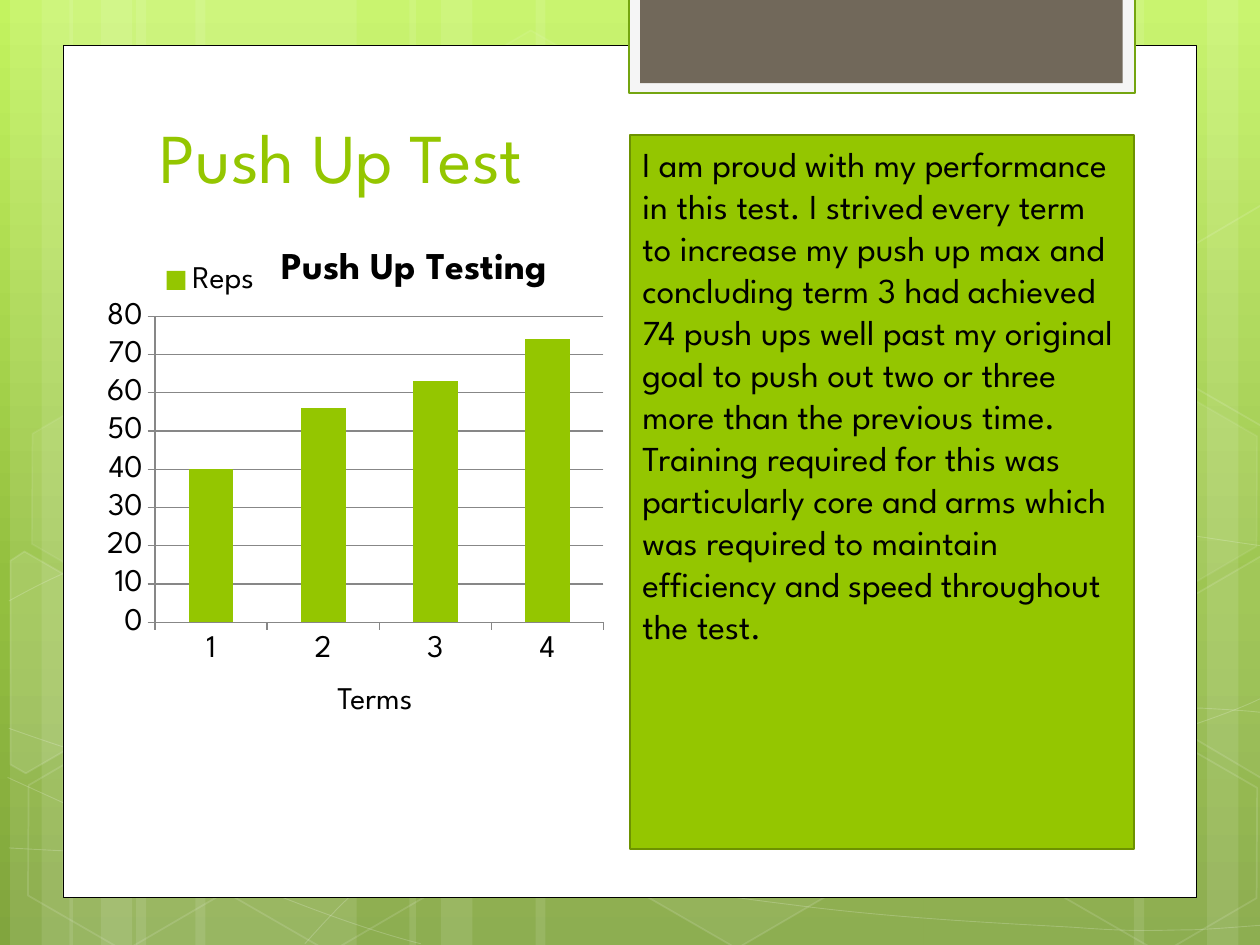
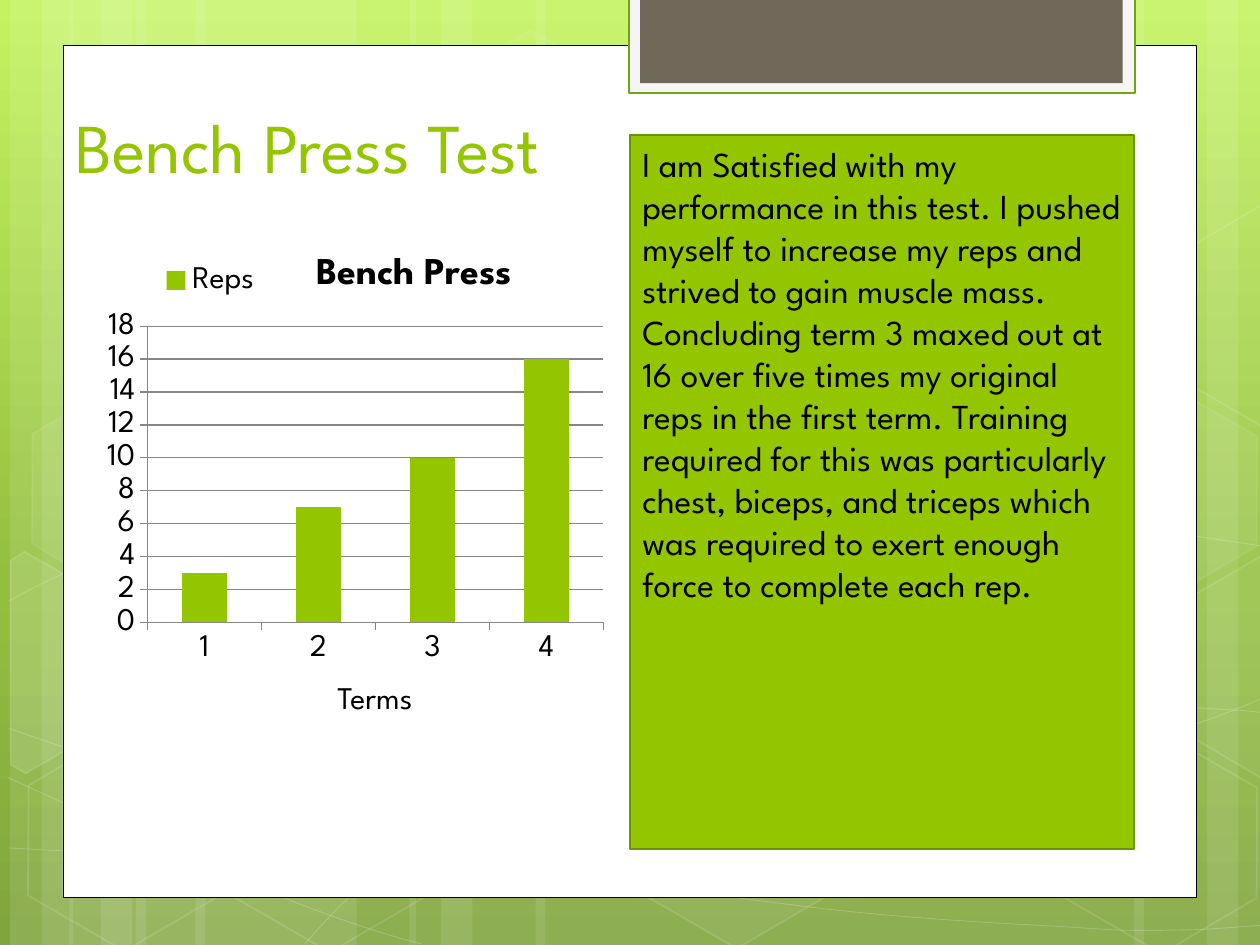
from math import cos, radians, sin
from typing import NamedTuple, Optional

from lxml.etree import SubElement
from pptx import Presentation
from pptx.chart.chart import Chart
from pptx.chart.data import CategoryChartData
from pptx.dml.color import RGBColor
from pptx.dml.fill import FillFormat
from pptx.enum.chart import XL_CHART_TYPE, XL_LEGEND_POSITION, XL_TICK_MARK
from pptx.enum.shapes import MSO_SHAPE
from pptx.enum.text import MSO_ANCHOR
from pptx.oxml.ns import qn
from pptx.shapes.autoshape import Shape
from pptx.slide import Slide
from pptx.text.text import Font
from pptx.util import Pt

PX = 9144  # 100 px to the inch
FONT = "League Spartan"
GREEN, DARK_GREEN, FRAME_GREEN = "94C600", "6D9200", "74A510"
WHITE, BLACK, OFF_WHITE, TAUPE, GRID_GREY = "FFFFFF", "000000", "F5F5F5", "71685A", "878787"
BACKDROP = ((0, "C3F35F"), (62, "93BF3F"), (100, "81A53E"))
HEXAGON_TILT = 30
HEXAGON_SLANT = 28.5 / 100

Point = tuple[int, int]


class Box(NamedTuple):
    left: int
    top: int
    width: int
    height: int

    def emu(self) -> list[int]:
        return [side * PX for side in self]


class Paint(NamedTuple):
    color: str
    opacity: int = 100


class Stroke(NamedTuple):
    paint: Paint
    points: float


class Hexagon(NamedTuple):
    left: int
    top: int
    fill_opacity: int
    line_opacity: int


class CutHexagon(NamedTuple):
    center: Point
    corners: list[Point]
    fill_opacity: int


class Spot(NamedTuple):
    """Place inside the chart, in px from its corner."""
    x: int
    y: int
    w: Optional[int] = None
    h: Optional[int] = None


class FitnessTest(NamedTuple):
    heading: str
    heading_at: Box
    chart_title: str
    chart_title_spot: Spot
    plot_spot: Spot
    reps: tuple[int, ...]
    axis_max: int
    axis_step: int
    reflection: str


# Backdrop: (left, width) of the vertical stripes
STRIPES = [(108, 175), (8, 50), (33, 83), (155, 175), (55, 50), (80, 83),
           (733, 175), (958, 50), (900, 83), (425, 308), (325, 50), (350, 83)]

# Backdrop: a start point, then cubic triples; a triple of one point is a straight line
CURVES: list[list[Point]] = [
    [(7, 673), (61, 676), (115, 679), (190, 678), (265, 677), (358, 675), (458, 665),
     (558, 655), (700, 636), (792, 617), (883, 598), (977, 568), (1007, 551)],
    [(7, 477), (36, 461), (65, 446), (121, 431), (178, 416), (259, 394), (347, 387),
     (436, 380), (544, 379), (654, 387), (764, 395), (947, 426), (1007, 434)],
    [(6, 617), (127, 672), (247, 727), (334, 749)],
    [(7, 578), (38, 589), (70, 600), (128, 616), (186, 631), (273, 656), (357, 673),
     (440, 690), (545, 708), (628, 718), (711, 729), (800, 733), (853, 736),
     (905, 740), (919, 738), (945, 738), (971, 737), (989, 735), (1007, 734)],
    [(242, 749), (260, 729), (278, 709), (302, 691), (326, 673), (360, 653), (388, 639),
     (416, 625), (433, 619), (470, 609), (506, 599), (573, 585), (608, 578),
     (644, 571), (649, 571), (680, 569), (711, 566), (760, 563), (794, 562),
     (829, 561), (886, 562), (886, 562), (953, 562), (953, 562), (953, 562),
     (971, 563), (988, 564), (997, 565), (1006, 566), (1003, 565), (1006, 566)],
]

HEXAGONS = [
    Hexagon(334, 36, 4, 8), Hexagon(497, 589, 6, 12), Hexagon(11, 591, 0, 12),
    Hexagon(14, 312, 7, 8), Hexagon(174, 592, 0, 12), Hexagon(753, 453, 10, 12),
    Hexagon(834, 593, 0, 12), Hexagon(834, 314, 7, 8),
]
CUT_HEXAGONS = [
    CutHexagon((36, 535), [(8, 445), (19, 438), (96, 482), (95, 570), (20, 614), (8, 607)], 10),
    CutHexagon((985, 520), [(926, 485), (1001, 441), (1009, 446), (1009, 613), (1002, 617),
                            (926, 573)], 4),
    CutHexagon((985, 241), [(926, 207), (1001, 163), (1010, 168), (1009, 335), (1002, 339),
                            (926, 295)], 0),
]

# Page
PAGE = Box(50, 36, 900, 676)
TAB_FRAME = Box(499, -2, 402, 76)
TAB = Box(508, -2, 383, 68)
CHART = Box(75, 183, 508, 350)
REFLECTION_PANEL = Box(500, 107, 400, 567)
REFLECTION_TEXT = Box(500, 108, 400, 481)
TERMS = Box(258, 533, 92, 40)
LEGEND_SPOT = Spot(49, 23)

TESTS = [
    FitnessTest(
        "Push Up Test", Box(117, 66, 768, 96),
        "Push Up Testing", Spot(143, 9), Spot(48, 68, 356, 243),
        (40, 56, 63, 74), 80, 10,
        "I am proud with my performance in this test. I strived every term to increase "
        "my push up max and concluding term 3 had achieved 74 push ups well past my "
        "original goal to push out two or three more than the previous time. Training "
        "required for this was particularly core and arms which was required to maintain "
        "efficiency and speed throughout the test."),
    FitnessTest(
        "Bench Press Test", Box(50, 58, 768, 96),
        "Bench Press", Spot(171, 13), Spot(42, 76, 362, 235),
        (3, 7, 10, 16), 18, 2,
        "I am Satisfied with my performance in this test. I pushed myself to increase my "
        "reps and strived to gain muscle mass. Concluding term 3 maxed out at 16 over five "
        "times my original reps in the first term. Training required for this was "
        "particularly chest, biceps, and triceps which was required to exert enough force "
        "to complete each rep."),
]


# Styling
def rgb(color: str) -> RGBColor:
    return RGBColor.from_string(color)


def apply_paint(fill: FillFormat, paint: Optional[Paint]) -> None:
    if paint is None or paint.opacity == 0:
        fill.background()
        return
    fill.solid()
    fill.fore_color.rgb = rgb(paint.color)
    if paint.opacity < 100:
        color = fill._xPr.find(qn("a:solidFill"))[0]
        SubElement(color, qn("a:alpha"), val=str(paint.opacity * 1000))


def style_shape(shape: Shape, fill: Optional[Paint], stroke: Optional[Stroke] = None) -> None:
    shape.shadow.inherit = False
    apply_paint(shape.fill, fill)
    apply_paint(shape.line.fill, stroke.paint if stroke else None)
    if stroke:
        shape.line.width = Pt(stroke.points)


def style_font(font: Font, size: float, color: str = BLACK, bold: bool = False) -> None:
    font.name, font.size, font.bold = FONT, Pt(size), bold
    font.color.rgb = rgb(color)


# Drawing
def add_block(slide: Slide, box: Box, fill: Paint, stroke: Optional[Stroke] = None) -> None:
    style_shape(slide.shapes.add_shape(MSO_SHAPE.RECTANGLE, *box.emu()), fill, stroke)


def add_outline(slide: Slide, points: list[Point], close: bool) -> Shape:
    builder = slide.shapes.build_freeform(*points[0], scale=PX)
    builder.add_line_segments(points[1:], close=close)
    return builder.convert_to_shape()


def add_text(slide: Slide, box: Box, text: str, size: int, color: str = BLACK,
             anchor: MSO_ANCHOR = MSO_ANCHOR.TOP) -> None:
    frame = slide.shapes.add_textbox(*box.emu()).text_frame
    frame.word_wrap = True
    frame.vertical_anchor = anchor
    frame.text = text
    style_font(frame.paragraphs[0].runs[0].font, size, color)


def add_curve(slide: Slide, nodes: list[Point]) -> None:
    """Draw the nodes as an outline and join each three lines into one curve."""
    shape = add_outline(slide, nodes, close=False)
    outline = next(shape._element.iter(qn("a:moveTo"))).getparent()
    lines = outline.findall(qn("a:lnTo"))
    for first in range(0, len(lines), 3):
        triple = lines[first:first + 3]
        if len(set(nodes[first + 1:first + 4])) > 1:
            curve = SubElement(outline, qn("a:cubicBezTo"))
            triple[0].addprevious(curve)
            curve.extend([line[0] for line in triple])
            removed = triple
        else:
            removed = triple[1:]
        for line in removed:
            outline.remove(line)
    style_shape(shape, None, Stroke(Paint(WHITE, 20), 0.5))


def turn_back(point: Point, center: Point) -> Point:
    """Undo the hexagon tilt of a point around a center."""
    tilt = radians(HEXAGON_TILT)
    dx, dy = point[0] - center[0], point[1] - center[1]
    return (round(center[0] + dx * cos(tilt) + dy * sin(tilt)),
            round(center[1] - dx * sin(tilt) + dy * cos(tilt)))


def add_backdrop(slide: Slide) -> None:
    # Gradient
    fill = slide.background.fill
    fill.gradient()
    fill.gradient_angle = 270
    stops = fill._fill._gradFill.find(qn("a:gsLst"))
    for stop in list(stops):
        stops.remove(stop)
    for position, color in BACKDROP:
        stop = SubElement(stops, qn("a:gs"), pos=str(position * 1000))
        SubElement(stop, qn("a:srgbClr"), val=color)

    # Stripes, curves and hexagons
    for left, width in STRIPES:
        add_block(slide, Box(left, 0, width, 750), Paint(WHITE, 10))
    for nodes in CURVES:
        add_curve(slide, nodes)
    for hexagon in HEXAGONS:
        box = Box(hexagon.left, hexagon.top, 175, 152)
        shape = slide.shapes.add_shape(MSO_SHAPE.HEXAGON, *box.emu())
        shape.adjustments[0] = HEXAGON_SLANT
        shape.rotation = HEXAGON_TILT
        style_shape(shape, Paint(WHITE, hexagon.fill_opacity),
                    Stroke(Paint(WHITE, hexagon.line_opacity), 1))
    for cut in CUT_HEXAGONS:
        corners = [turn_back(corner, cut.center) for corner in cut.corners]
        shape = add_outline(slide, corners, close=True)
        shape.rotation = HEXAGON_TILT
        style_shape(shape, Paint(WHITE, cut.fill_opacity), Stroke(Paint(WHITE, 12), 1))

    # White page with the tab at its top
    add_block(slide, PAGE, Paint(WHITE), Stroke(Paint(BLACK), 0.5))
    add_block(slide, TAB_FRAME, Paint(OFF_WHITE), Stroke(Paint(FRAME_GREEN), 1.25))
    add_block(slide, TAB, Paint(TAUPE))


def place_in_chart(element, spot: Spot, index: int) -> None:
    """Give a chart part a manual layout as its child number index."""
    for layout in element.findall(qn("c:layout")):
        element.remove(layout)
    layout = SubElement(element, qn("c:layout"))
    element.insert(index, layout)
    manual = SubElement(layout, qn("c:manualLayout"))
    if spot.w is not None:
        SubElement(manual, qn("c:layoutTarget"), val="inner")
    for mode in ("xMode", "yMode"):
        SubElement(manual, qn(f"c:{mode}"), val="edge")
    for side, length in spot._asdict().items():
        if length is not None:
            whole = CHART.width if side in "xw" else CHART.height
            SubElement(manual, qn(f"c:{side}"), val=str(length / whole))


def add_reps_chart(slide: Slide, test: FitnessTest) -> None:
    data = CategoryChartData()
    data.categories = [str(term) for term in range(1, len(test.reps) + 1)]
    data.add_series("Reps", test.reps)
    chart: Chart = slide.shapes.add_chart(
        XL_CHART_TYPE.COLUMN_CLUSTERED, *CHART.emu(), data).chart
    style_font(chart.font, 18)

    # Title and legend
    title = chart.chart_title
    title.text_frame.text = test.chart_title
    style_font(title.text_frame.paragraphs[0].runs[0].font, 21.6, bold=True)
    place_in_chart(title._element, test.chart_title_spot, 1)
    chart.has_legend = True
    chart.legend.position = XL_LEGEND_POSITION.RIGHT
    chart.legend.include_in_layout = False
    place_in_chart(chart.legend._element, LEGEND_SPOT, 1)

    # Columns
    plot = chart.plots[0]
    plot.gap_width = 150
    plot.vary_by_categories = False
    apply_paint(plot.series[0].format.fill, Paint(GREEN))
    place_in_chart(chart._chartSpace.chart.plotArea, test.plot_spot, 0)

    # Axes
    reps_axis = chart.value_axis
    reps_axis.minimum_scale, reps_axis.maximum_scale = 0, test.axis_max
    reps_axis.major_unit = test.axis_step
    reps_axis.has_major_gridlines = True
    for axis in (reps_axis, chart.category_axis):
        axis.major_tick_mark = XL_TICK_MARK.OUTSIDE
    for lined in (reps_axis, chart.category_axis, reps_axis.major_gridlines):
        lined.format.line.color.rgb = rgb(GRID_GREY)
        lined.format.line.width = Pt(0.75)


def add_test_slide(deck, test: FitnessTest) -> None:
    slide = deck.slides.add_slide(deck.slide_layouts[6])
    add_backdrop(slide)
    add_text(slide, test.heading_at, test.heading, 40, GREEN, MSO_ANCHOR.BOTTOM)
    add_reps_chart(slide, test)
    add_block(slide, REFLECTION_PANEL, Paint(GREEN), Stroke(Paint(DARK_GREEN), 1.25))
    add_text(slide, REFLECTION_TEXT, test.reflection, 20)
    add_text(slide, TERMS, "Terms", 18)


def main() -> None:
    deck = Presentation()
    deck.slide_width, deck.slide_height = 1000 * PX, 750 * PX
    for test in TESTS:
        add_test_slide(deck, test)
    deck.save("out.pptx")


if __name__ == "__main__":
    main()
